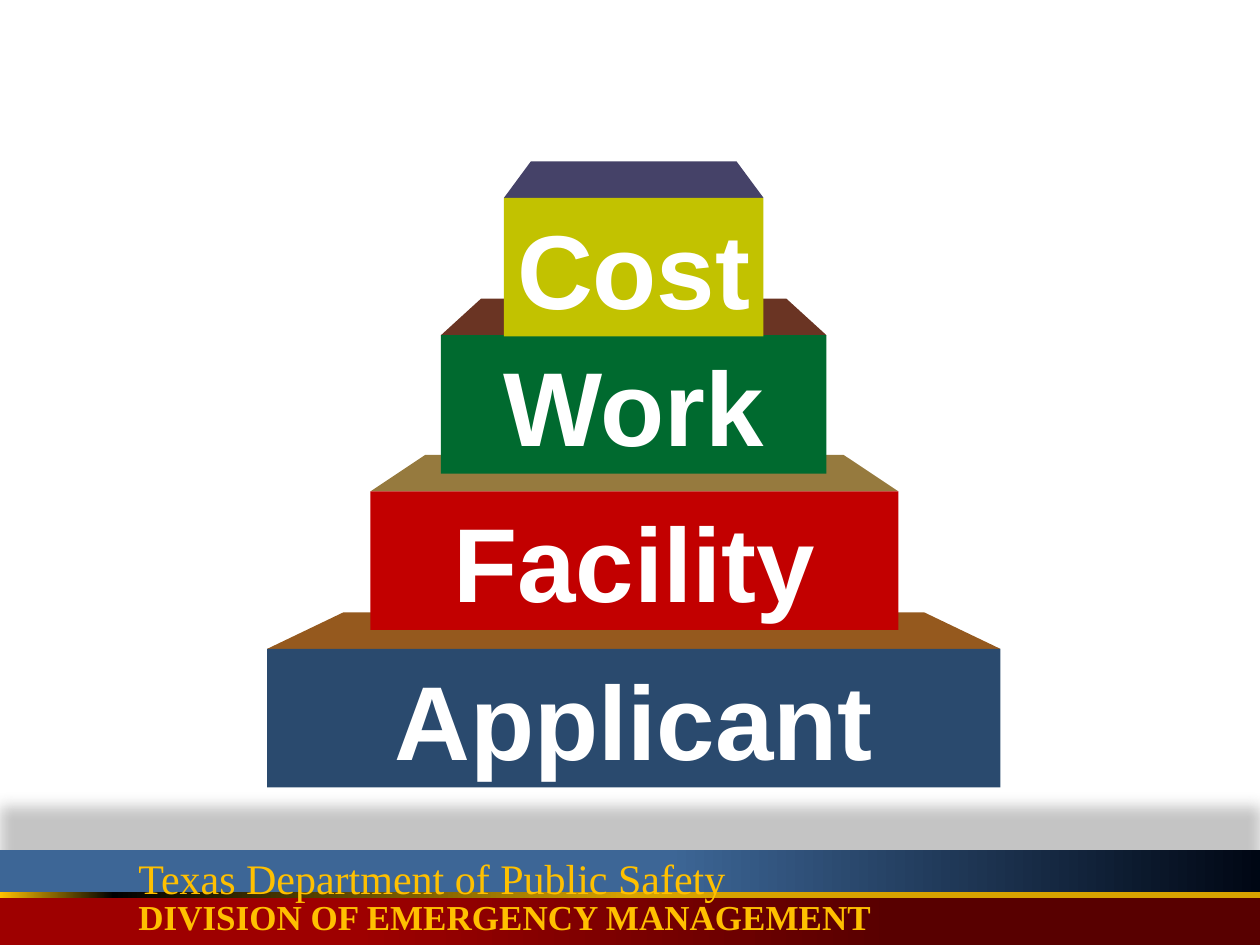
from lxml import etree
from pptx import Presentation
from pptx import util as u
from pptx.dml.color import RGBColor
from pptx.enum import shapes, text
from pptx.oxml import parse_xml
from pptx.oxml.ns import nsdecls, qn

COLORS = {
    "white": "FFFFFF", "gold": "FFC000", "dark_gold": "D7A200", "black": "000000",
    "blue": "3D6696", "night": "000714", "red": "9E0000", "maroon": "580000", "grey": "808080",
}
TIERS = [
    ("Applicant", 2.12, 5.15, 5.82, "2A4A6E", "95591E"),
    ("Facility", 2.94, 3.9, 4.19, "C20000", "967A3E"),
    ("Work", 3.5, 2.66, 3.06, "006A2F", "6A3423"),
    ("Cost", 4, 1.57, 2.06, "C2C200", "454268"),
]
BANDS = [
    (6.75, 0.67, [(0, "blue"), (53, "blue"), (100, "night")]),
    (7.08, 0.42, [(28, "red"), (71, "maroon")]),
    (7.08, 0.05, [(0, "gold"), (9, "black"), (50, "dark_gold")]),
]
FOOTER = [
    ("Texas Department of Public Safety", 6.72, 6, 0.4, 24, False),
    ("DIVISION OF EMERGENCY MANAGEMENT", 7.06, 6.83, 0.44, 20, True),
]
FRONT_HEIGHT, TOP_HEIGHT, INSET_SHARE = 1.1, 0.29, 0.104


def rgb(value):
    """Turn a hex string into a colour."""
    return RGBColor.from_string(value)


def fill_plain(sp, color):
    """Give a shape a solid fill with no line or shadow."""
    sp.shadow.inherit = False
    sp.fill.solid()
    sp.fill.fore_color.rgb = rgb(color)
    sp.line.fill.background()


def write(sp, words, font, size, bold, color):
    """Set and format one line of text."""
    p = sp.text_frame.paragraphs[0]
    p.text = words
    f = p.runs[0].font
    f.name, f.size, f.bold = font, u.Pt(size), bold
    f.color.rgb = rgb(color)
    return p


def add_band(slide, left, top, width, height, stops):
    """Draw a bar with a left-to-right gradient."""
    sp = slide.shapes.add_shape(shapes.MSO_SHAPE.RECTANGLE, left, top, width, height)
    fill_plain(sp, COLORS["white"])
    marks = "".join(
        f'<a:gs pos="{pos * 1000}"><a:srgbClr val="{COLORS[name]}"/></a:gs>' for pos, name in stops)
    gradient = parse_xml(
        f'<a:gradFill {nsdecls("a")} rotWithShape="1"><a:gsLst>{marks}</a:gsLst>'
        '<a:lin ang="0" scaled="0"/></a:gradFill>')
    pr = sp._element.spPr
    pr.replace(pr.find(qn("a:solidFill")), gradient)
    return sp


def add_shadow(sp, color, alpha, blur, distance):
    """Cast a soft shadow upwards."""
    effects = sp._element.spPr.find(qn("a:effectLst"))
    shadow = etree.SubElement(
        effects, qn("a:outerShdw"), blurRad=str(u.Pt(blur)), dist=str(u.Pt(distance)),
        dir="16200000", algn="ctr", rotWithShape="0")
    tint = etree.SubElement(shadow, qn("a:srgbClr"), val=color)
    etree.SubElement(tint, qn("a:alpha"), val=str(alpha * 1000))


def add_footer(slide, width):
    """Place the coloured bars and the department name."""
    bars = [add_band(slide, 0, u.Inches(top), width, u.Inches(height), stops)
            for top, height, stops in BANDS]
    add_shadow(bars[0], COLORS["grey"], 46, 8, 25)
    for words, top, span, height, size, bold in FOOTER:
        box = slide.shapes.add_textbox(u.Inches(1), u.Inches(top), u.Inches(span), u.Inches(height))
        box.text_frame.word_wrap = True
        write(box, words, "Times New Roman", size, bold, COLORS["gold"])


def add_tier(slide, label, left, top, width, front, lid):
    """Draw one block with its front face and receding top."""
    inset, back = width * INSET_SHARE, top - TOP_HEIGHT
    builder = slide.shapes.build_freeform(u.Inches(left), u.Inches(top))
    corners = [(left + inset, back), (left + width - inset, back), (left + width, top)]
    builder.add_line_segments([(u.Inches(x), u.Inches(y)) for x, y in corners], close=True)
    fill_plain(builder.convert_to_shape(), lid)
    sp = slide.shapes.add_shape(
        shapes.MSO_SHAPE.RECTANGLE, *map(u.Inches, (left, top, width, FRONT_HEIGHT)))
    fill_plain(sp, front)
    sp.text_frame.word_wrap = False
    sp.text_frame.vertical_anchor = text.MSO_ANCHOR.MIDDLE
    p = write(sp, label, "Arial", 60, True, COLORS["white"])
    p.alignment = text.PP_ALIGN.CENTER


def main():
    """Build the slide and save it."""
    prs = Presentation()
    prs.slide_width, prs.slide_height = u.Inches(10), u.Inches(7.5)
    slide = prs.slides.add_slide(prs.slide_layouts[6])
    add_footer(slide, prs.slide_width)
    for tier in TIERS:
        add_tier(slide, *tier)
    prs.save("out.pptx")


if __name__ == "__main__":
    main()
